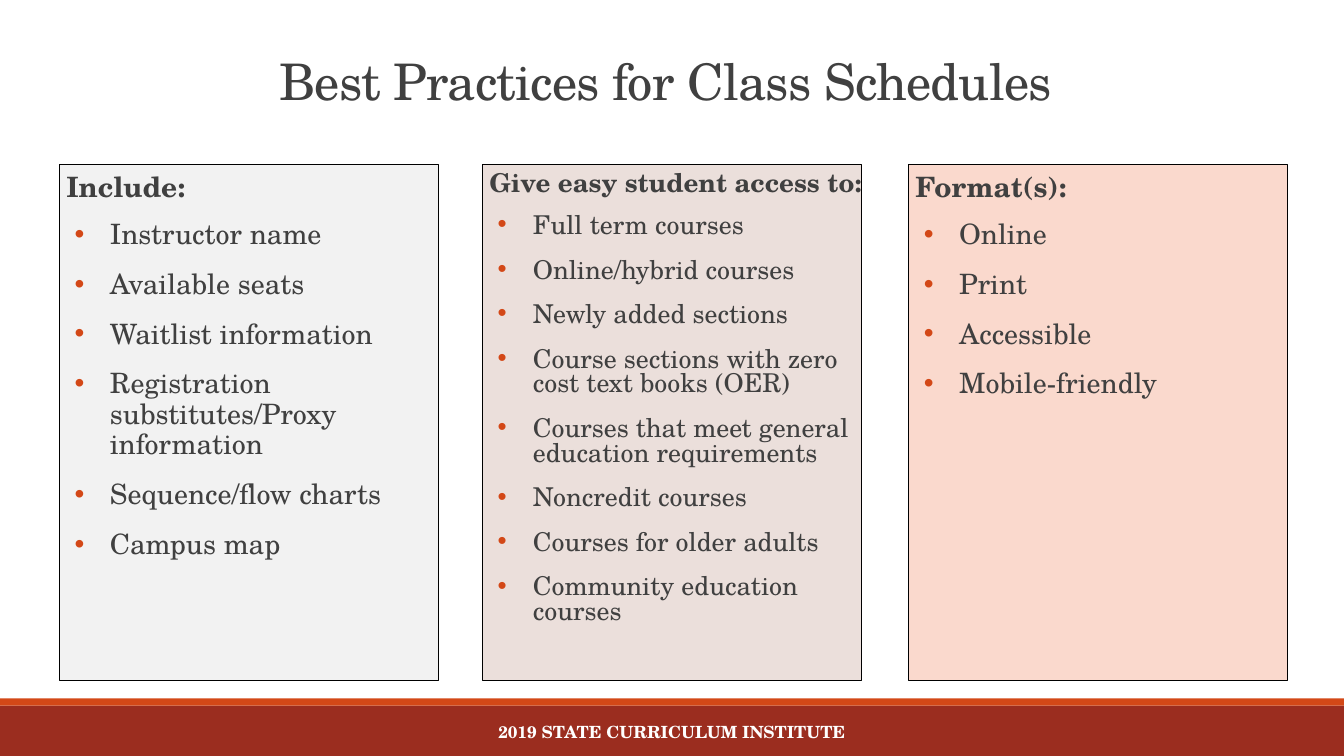
import pptx
import pptx.dml.color
import pptx.enum.shapes
import pptx.enum.text
import pptx.oxml
import pptx.util
from pptx.util import Cm, Pt

FONT = "TeX Gyre Schola"
RGBColor = pptx.dml.color.RGBColor
DARK_GRAY = RGBColor(0x40, 0x40, 0x40)
BLACK = RGBColor(0x00, 0x00, 0x00)
WHITE = RGBColor(0xFF, 0xFF, 0xFF)
ORANGE = RGBColor(0xD3, 0x48, 0x17)
BRICK = RGBColor(0x9B, 0x2D, 0x1F)
PALE_GRAY = RGBColor(0xF2, 0xF2, 0xF2)
PALE_ROSE = RGBColor(0xEB, 0xDF, 0xDB)
PALE_ORANGE = RGBColor(0xFA, 0xD9, 0xCD)
NAMESPACE = 'xmlns:a="http://schemas.openxmlformats.org/drawingml/2006/main"'
MIDDLE = pptx.enum.text.MSO_ANCHOR.MIDDLE
CENTER = pptx.enum.text.PP_ALIGN.CENTER


def format_runs(paragraph, size, color, bold=False):
    """Set the font of every run in a paragraph."""
    for run in paragraph.runs:
        run.font.name = FONT
        run.font.size = Pt(size)
        run.font.bold = bold
        run.font.color.rgb = color


def set_bullet(paragraph, margin, indent, bullet):
    """Set the indents of a paragraph and give it an orange bullet or none."""
    properties = paragraph._p.get_or_add_pPr()
    properties.set("marL", str(margin))
    properties.set("indent", str(indent))
    parts = [f"<a:buNone {NAMESPACE}/>"]
    if bullet:
        parts = [
            f'<a:buClr {NAMESPACE}><a:srgbClr val="{ORANGE}"/></a:buClr>',
            f'<a:buFont {NAMESPACE} typeface="Arial"/>',
            f'<a:buChar {NAMESPACE} char="{bullet}"/>',
        ]
    for part in parts:
        properties.append(pptx.oxml.parse_xml(part))


presentation = pptx.Presentation()
presentation.slide_width = Cm(33.87)
presentation.slide_height = Cm(19.05)
slide = presentation.slides.add_slide(presentation.slide_layouts.get_by_name("Comparison"))
title, *bodies = slide.placeholders

# Title
title.left, title.top, title.width, title.height = Cm(2.8), Cm(0.81), Cm(27.94), Cm(2.1)
title.text_frame.text = "Best Practices for Class Schedules"
title.text_frame.auto_size = pptx.enum.text.MSO_AUTO_SIZE.NONE
title.text_frame.vertical_anchor = pptx.enum.text.MSO_ANCHOR.BOTTOM
title_paragraph = title.text_frame.paragraphs[0]
title_paragraph.alignment = CENTER
title_paragraph.line_spacing = 0.85
format_runs(title_paragraph, 36, DARK_GRAY)
title_paragraph.runs[0].font._element.set("spc", "-50")

# Panels: left edge, fill, text size, heading spacing, list spacing, heading, items
panels = [
    (1.5, PALE_GRAY, 20, 1.0, 0.9, "Include:", [
        "Instructor name",
        "Available seats",
        "Waitlist information",
        "Registration substitutes/Proxy information",
        "Sequence/flow charts",
        "Campus map",
    ]),
    (12.16, PALE_ROSE, 18.5, 0.9, 0.8, "Give easy student access to:", [
        "Full term courses",
        "Online/hybrid courses",
        "Newly added sections",
        "Course sections with zero cost text books (OER)",
        "Courses that meet general education requirements",
        "Noncredit courses",
        "Courses for older adults",
        "Community education courses",
    ]),
    (22.9, PALE_ORANGE, 20, 1.0, 0.9, "Format(s):", [
        "Online",
        "Print",
        "Accessible",
        "Mobile-friendly",
    ]),
]
for panel, body in zip(panels, bodies):
    left, fill, size, heading_spacing, list_spacing, heading, items = panel
    body.left, body.top = Cm(left), Cm(4.15)
    body.width, body.height = Cm(9.55), Cm(13)
    body.fill.solid()
    body.fill.fore_color.rgb = fill
    body.line.color.rgb = BLACK
    body.line.width = Pt(0.75)
    frame = body.text_frame
    frame.text = "\n".join([heading, *items])
    frame.word_wrap = True
    frame.auto_size = pptx.enum.text.MSO_AUTO_SIZE.NONE
    frame.vertical_anchor = pptx.enum.text.MSO_ANCHOR.TOP
    frame.margin_left = frame.margin_right = 0
    frame.margin_top = frame.margin_bottom = Cm(0.13)
    for number, paragraph in enumerate(frame.paragraphs):
        is_heading = number == 0
        paragraph.line_spacing = heading_spacing if is_heading else list_spacing
        paragraph.space_before = Pt(0 if is_heading else 12)
        paragraph.space_after = Pt(0 if is_heading else 2)
        format_runs(paragraph, size, DARK_GRAY, is_heading)
        if is_heading:
            set_bullet(paragraph, Cm(0.17), 0, None)
        else:
            set_bullet(paragraph, Cm(1.27), Cm(-0.89), "•")

for unused_body in bodies[len(panels):]:
    unused_body.element.getparent().remove(unused_body.element)

# Footer bands and caption
for top, height, color in [(17.78, 1.27, BRICK), (17.6, 0.18, ORANGE)]:
    band = slide.shapes.add_shape(
        pptx.enum.shapes.MSO_SHAPE.RECTANGLE,
        0, Cm(top), presentation.slide_width, Cm(height))
    band.shadow.inherit = False
    band.fill.solid()
    band.fill.fore_color.rgb = color
    band.line.fill.background()

caption = slide.shapes.add_textbox(Cm(10.24), Cm(17.93), Cm(13.39), Cm(1.02))
caption.text_frame.word_wrap = True
caption.text_frame.vertical_anchor = MIDDLE
caption.text_frame.text = "2019 STATE CURRICULUM INSTITUTE"
caption_paragraph = caption.text_frame.paragraphs[0]
caption_paragraph.alignment = CENTER
format_runs(caption_paragraph, 12, WHITE, True)

presentation.save("out.pptx")
